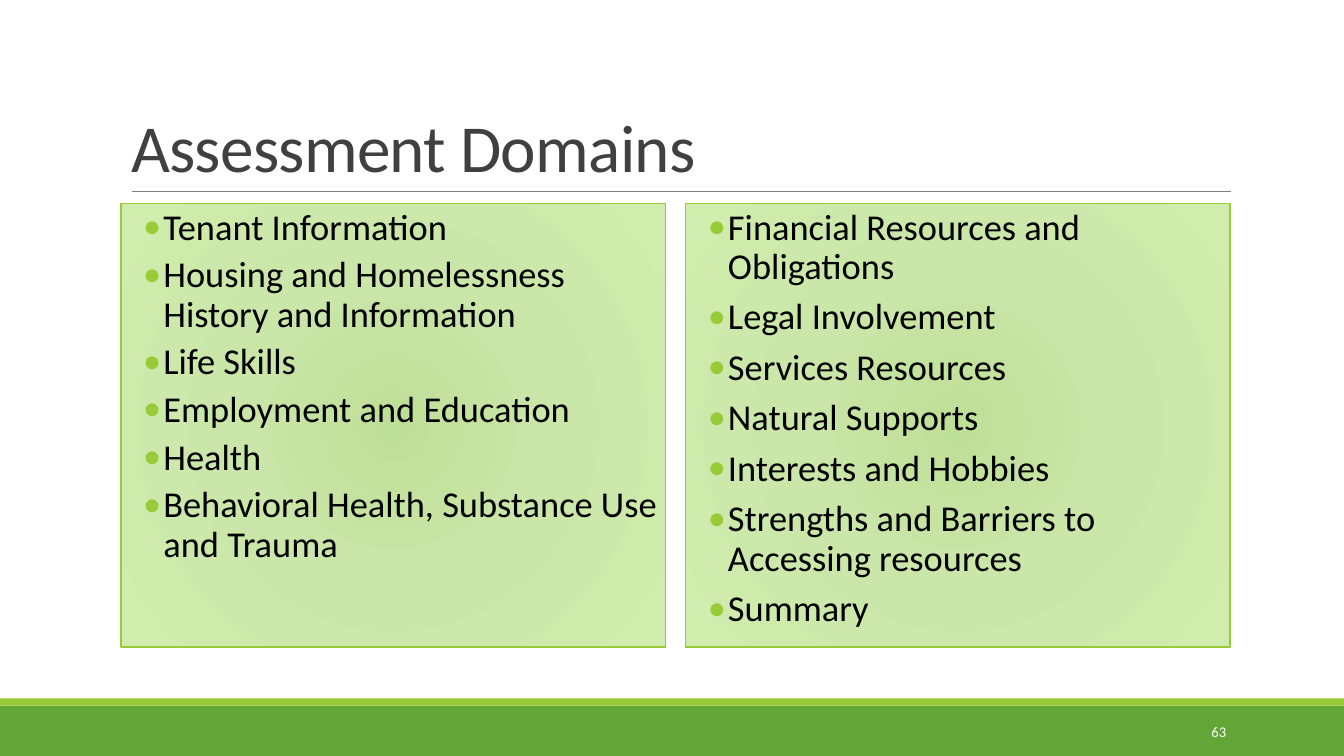
from lxml import etree
from pptx import Presentation
from pptx.dml.color import RGBColor
from pptx.enum.shapes import MSO_CONNECTOR, MSO_SHAPE
from pptx.enum.text import MSO_ANCHOR, MSO_AUTO_SIZE, PP_ALIGN
from pptx.oxml import parse_xml
from pptx.oxml.ns import nsdecls, qn
from pptx.util import Inches, Pt

COLORS = {
    "lime": "99CB38",
    "green": "63A537",
    "rule": "808080",
    "title": "404040",
    "text": "000000",
    "white": "FFFFFF",
}
PANEL_STOPS = [(0, "BEDF97"), (45, "CAE6A9"), (100, "D0EDAE")]


def rgb(name):
    return RGBColor.from_string(COLORS[name])


def write(paragraph, text, size, color, align=PP_ALIGN.LEFT, line_spacing=None,
          before=0, after=0, tracking=None, bullet=None):
    """Fill a paragraph with one formatted run, optionally with a bullet."""
    paragraph.alignment = align
    paragraph.line_spacing = line_spacing
    paragraph.space_before = Pt(before)
    paragraph.space_after = Pt(after)
    if bullet:
        paragraph.level = 1
        props = paragraph._p.get_or_add_pPr()
        props.set("marL", str(Inches(0.42)))
        props.set("indent", str(Inches(-0.2)))
        bullet_color = etree.SubElement(props, qn("a:buClr"))
        etree.SubElement(bullet_color, qn("a:srgbClr"), val=COLORS["lime"])
        etree.SubElement(props, qn("a:buFont"), typeface="Calibri")
        etree.SubElement(props, qn("a:buChar"), char=bullet)
    run = paragraph.add_run()
    run.text = text
    run.font.name = "Calibri"
    run.font.size = Pt(size)
    run.font.color.rgb = rgb(color)
    if tracking:
        run._r.get_or_add_rPr().set("spc", str(int(tracking * 100)))


prs = Presentation()
prs.slide_width = Inches(13.33)
prs.slide_height = Inches(7.5)
slide = prs.slides.add_slide(prs.slide_layouts[3])
heading, *panels = slide.placeholders

# Footer bands and the rule below the title
for top, height, color in [(7, 0.5, "green"), (6.93, 0.07, "lime")]:
    band = slide.shapes.add_shape(
        MSO_SHAPE.RECTANGLE, 0, Inches(top), prs.slide_width, Inches(height))
    band.shadow.inherit = False
    band.fill.solid()
    band.fill.fore_color.rgb = rgb(color)
    band.line.fill.background()

title_rule = slide.shapes.add_connector(
    MSO_CONNECTOR.STRAIGHT, Inches(1.31), Inches(1.9), Inches(12.21), Inches(1.9))
title_rule.line.color.rgb = rgb("rule")
title_rule.line.width = Pt(0.5)
etree.SubElement(title_rule._element.spPr, qn("a:effectLst"))

# Title
heading.left, heading.top = Inches(1.2), Inches(0.31)
heading.width, heading.height = Inches(11), Inches(1.59)
heading.text_frame.vertical_anchor = MSO_ANCHOR.BOTTOM
heading.text_frame.auto_size = MSO_AUTO_SIZE.NONE
write(heading.text_frame.paragraphs[0], "Assessment Domains", size=48,
      color="title", line_spacing=0.85, tracking=-0.5)

# Two panels of domains
domains = [
    (4, ["Tenant Information",
         "Housing and Homelessness History and Information",
         "Life Skills",
         "Employment and Education",
         "Health",
         "Behavioral Health, Substance Use and Trauma"]),
    (6, ["Financial Resources and Obligations",
         "Legal Involvement",
         "Services Resources",
         "Natural Supports",
         "Interests and Hobbies",
         "Strengths and Barriers to Accessing resources",
         "Summary"]),
]
stops = "".join(f'<a:gs pos="{pos * 1000}"><a:srgbClr val="{color}"/></a:gs>'
                for pos, color in PANEL_STOPS)
for column, (panel, (after, names)) in enumerate(zip(panels, domains)):
    panel.left, panel.top = Inches(1.2 + column * 5.6), Inches(2.02)
    panel.width, panel.height = Inches(5.4), Inches(4.4)
    panel._element.spPr.append(parse_xml(
        f'<a:gradFill {nsdecls("a")} rotWithShape="1"><a:gsLst>{stops}</a:gsLst>'
        '<a:path path="circle"><a:fillToRect l="100000" t="100000" '
        'r="100000" b="100000"/></a:path></a:gradFill>'))
    panel.line.color.rgb = rgb("lime")
    panel.line.width = Pt(1)
    frame = panel.text_frame
    frame.auto_size = MSO_AUTO_SIZE.NONE
    frame.vertical_anchor = MSO_ANCHOR.TOP
    frame.margin_left = frame.margin_right = 0
    frame.margin_top = frame.margin_bottom = Inches(0.05)
    for row, name in enumerate(names):
        item = frame.add_paragraph() if row else frame.paragraphs[0]
        write(item, name, size=26, color="text", line_spacing=0.9,
              before=2 if row else 0, after=after, bullet="•")

# Slide number
page_number = slide.shapes.add_textbox(
    Inches(10.83), Inches(7.06), Inches(1.43), Inches(0.4))
page_number.text_frame.word_wrap = True
page_number.text_frame.vertical_anchor = MSO_ANCHOR.MIDDLE
write(page_number.text_frame.paragraphs[0], "63", size=10.5, color="white",
      align=PP_ALIGN.RIGHT)

prs.save("out.pptx")
